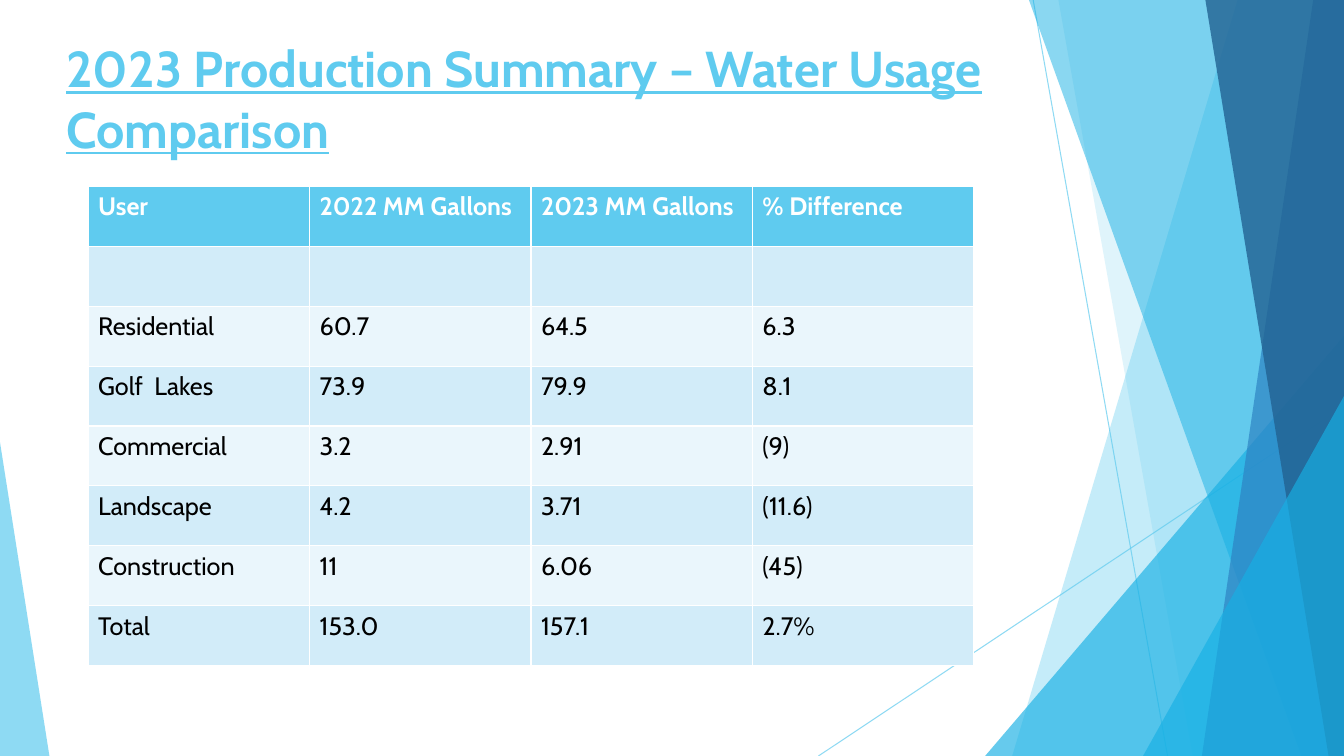
from lxml import etree
from pptx import Presentation
from pptx import util as u
from pptx.dml import color
from pptx.enum import shapes, text
from pptx.oxml import ns

WIDE, HIGH = 960, 540
FONT = "Cabin"
SKY, AQUA, WHITE, BLACK = "5FCBEF", "17B0E4", "FFFFFF", "000000"
BANDS = ["EAF6FC", "D2ECF9"]
TITLE = "2023 Production Summary – Water Usage Comparison"
HEAD = {"size": u.Pt(18), "bold": True, "name": FONT}
BODY = {"size": u.Pt(18), "bold": False, "name": FONT}
BIG = {"size": u.Pt(36), "bold": True, "underline": True, "name": FONT}
ROWS = [
    ("User", "2022 MM Gallons", "2023 MM Gallons", "% Difference"),
    ("", "", "", ""),
    ("Residential", "60.7", "64.5", "6.3"),
    ("Golf  Lakes", "73.9", "79.9", "8.1"),
    ("Commercial", "3.2", "2.91", "(9)"),
    ("Landscape", "4.2", "3.71", "(11.6)"),
    ("Construction", "11", "6.06", "(45)"),
    ("Total", "153.0", "157.1", "2.7%"),
]
GRID = (62.9, 133.2)
COL, ROW = 158.2, 42.8
RAYS = [(738, 0, 834, HIGH), (WIDE, 290.2, 584.6, HIGH)]
FACETS = [
    ("slab", (884, 723), SKY, 36),
    ("slab", (756, 852), SKY, 20),
    ("peak", (703.7, 239.8, 256.3, 1), AQUA, 66),
    ("slab", (735, 929.5), AQUA, 50),
    ("slab", (938, 858.5), "2E83C3", 70),
    ("slab", (861, 949), "226292", 80),
    ("peak", (816.5, 283, 143.5, 1), AQUA, 66),
    ("peak", (0, 316, 35.3, 0), SKY, 70),
]


def paint(part, tone, alpha=100):
    part.solid()
    part.fore_color.rgb = color.RGBColor.from_string(tone)
    if alpha < 100:
        tint = part._xPr.find(".//" + ns.qn("a:srgbClr"))
        etree.SubElement(tint, ns.qn("a:alpha")).set("val", str(alpha * 1000))


def style(font, look, tone):
    for key, value in look.items():
        setattr(font, key, value)
    paint(font.fill, tone)


def slab(slide, top, base):
    spots = [(WIDE, 0), (WIDE, HIGH), (base, HIGH)]
    form = slide.shapes.build_freeform(u.Pt(top), 0)
    form.add_line_segments([(u.Pt(x), u.Pt(y)) for x, y in spots])
    return form.convert_to_shape()


def peak(slide, left, top, width, tip):
    form = slide.shapes.add_shape(
        shapes.MSO_SHAPE.ISOSCELES_TRIANGLE,
        *map(u.Pt, (left, top, width, HIGH - top)))
    form.adjustments[0] = tip
    return form


def ray(slide, ends):
    line = slide.shapes.add_connector(
        shapes.MSO_CONNECTOR.STRAIGHT, *map(u.Pt, ends))
    line.line.width = u.Pt(0.75)
    paint(line.line.fill, SKY, 70)
    etree.SubElement(line._element.spPr, ns.qn("a:effectLst"))


def title(slide):
    box = slide.shapes.add_textbox(*map(u.Pt, (40.3, 23, 745.2, 104.4)))
    frame = box.text_frame
    frame.word_wrap = True
    frame.vertical_anchor = text.MSO_ANCHOR.TOP
    run = frame.paragraphs[0].add_run()
    run.text = TITLE
    style(run.font, BIG, SKY)


def table(slide):
    rows, cols = len(ROWS), len(ROWS[0])
    size = (COL * cols, ROW * rows)
    grid = slide.shapes.add_table(
        rows, cols, *map(u.Pt, GRID + size)).table
    for r, row in enumerate(ROWS):
        for c, word in enumerate(row):
            cell = grid.cell(r, c)
            cell.text = word
            paint(cell.fill, BANDS[r % 2] if r else SKY)
            style(cell.text_frame.paragraphs[0].font,
                  BODY if r else HEAD, BLACK if r else WHITE)
            for run in cell.text_frame.paragraphs[0].runs:
                style(run.font, BODY if r else HEAD, BLACK if r else WHITE)


def main():
    deck = Presentation()
    deck.slide_width, deck.slide_height = u.Pt(WIDE), u.Pt(HIGH)
    slide = deck.slides.add_slide(deck.slide_layouts[6])
    for ends in RAYS:
        ray(slide, ends)
    makers = {"slab": slab, "peak": peak}
    for kind, spots, tone, alpha in FACETS:
        form = makers[kind](slide, *spots)
        form.shadow.inherit = False
        paint(form.fill, tone, alpha)
        form.line.fill.background()
    title(slide)
    table(slide)
    deck.save("out.pptx")


if __name__ == "__main__":
    main()
